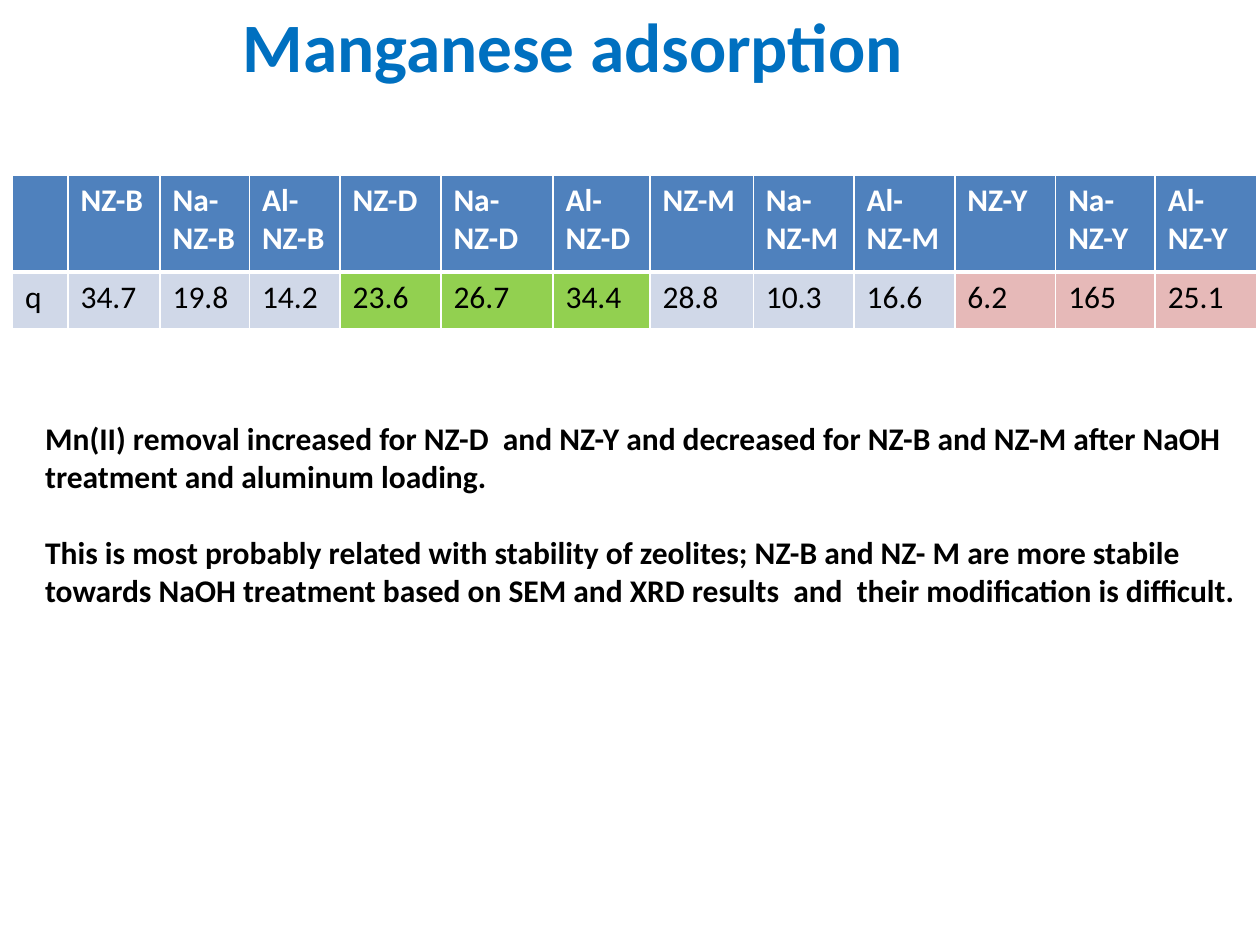
from lxml import etree
from pptx import Presentation
from pptx.dml.color import RGBColor
from pptx.enum.text import MSO_ANCHOR, PP_ALIGN
from pptx.oxml.ns import qn
from pptx.util import Inches, Pt

CENTER = PP_ALIGN.CENTER
LEFT = PP_ALIGN.LEFT
MIDDLE = MSO_ANCHOR.MIDDLE
TOP = MSO_ANCHOR.TOP

WIDTH, HEIGHT = Inches(10), Inches(7.5)
FONT = "Calibri"
COLORS = {
    "title": "0070C0",
    "header": "4F81BD",
    "plain": "D0D8E8",
    "increased": "92D050",
    "yield": "E6B9B8",
    "white": "FFFFFF",
    "black": "000000",
}
ZEOLITES = [
    ("NZ-B", "plain", ["34.7", "19.8", "14.2"]),
    ("NZ-D", "increased", ["23.6", "26.7", "34.4"]),
    ("NZ-M", "plain", ["28.8", "10.3", "16.6"]),
    ("NZ-Y", "yield", ["6.2", "165", "25.1"]),
]
TREATMENTS = ["", "Na-", "Al-"]
COLUMN_WIDTHS = [0.44, 0.73, 0.71, 0.72, 0.8, 0.89, 0.77, 0.82, 0.8, 0.8, 0.8, 0.79, 0.81]
ROW_HEIGHTS = [0.77, 0.45]
FINDINGS = [
    "Mn(II) removal increased for NZ-D  and NZ-Y and decreased for NZ-B and NZ-M "
    "after NaOH treatment and aluminum loading.",
    "This is most probably related with stability of zeolites; NZ-B and NZ- M are more stabile "
    "towards NaOH treatment based on SEM and XRD results  and  their modification is difficult.",
]


def add_run(paragraph, wording, size, color, bold):
    """Append one styled run to a paragraph."""
    run = paragraph.add_run()
    run.text = wording
    run.font.name = FONT
    run.font.size = Pt(size)
    run.font.bold = bold
    run.font.color.rgb = RGBColor.from_string(COLORS[color])


def add_text(slide, shares, paragraphs, size, color, align=LEFT, anchor=TOP, gap=0):
    """Add a bold text box placed by shares of the slide's size."""
    left, top, width, height = shares
    box = slide.shapes.add_textbox(
        int(WIDTH * left), int(HEIGHT * top), int(WIDTH * width), int(HEIGHT * height))
    frame = box.text_frame
    frame.word_wrap = True
    frame.vertical_anchor = anchor
    for index, wording in enumerate(paragraphs):
        paragraph = frame.add_paragraph() if index else frame.paragraphs[0]
        paragraph.alignment = align
        if index:
            paragraph.space_before = Pt(gap)
        add_run(paragraph, wording, size, color, True)


def set_borders(cell, top, bottom):
    """Draw white borders around a cell, with given top and bottom widths."""
    properties = cell._tc.get_or_add_tcPr()
    for side, points in (("L", 1), ("R", 1), ("T", top), ("B", bottom)):
        line = etree.SubElement(properties, qn(f"a:ln{side}"), w=str(Pt(points)))
        fill = etree.SubElement(line, qn("a:solidFill"))
        etree.SubElement(fill, qn("a:srgbClr"), val=COLORS["white"])


def fill_cell(cell, wording, fill, color, bold, borders):
    """Set the borders, fill and wording of one table cell."""
    set_borders(cell, *borders)
    cell.fill.solid()
    cell.fill.fore_color.rgb = RGBColor.from_string(COLORS[fill])
    if wording:
        add_run(cell.text_frame.paragraphs[0], wording, 18, color, bold)


def add_adsorption_table(slide):
    """Add the table of adsorption capacity for each zeolite and treatment."""
    table = slide.shapes.add_table(
        len(ROW_HEIGHTS), len(COLUMN_WIDTHS), int(WIDTH * 0.01), Inches(1.39),
        Inches(sum(COLUMN_WIDTHS)), Inches(sum(ROW_HEIGHTS))).table
    for column, width in zip(table.columns, COLUMN_WIDTHS):
        column.width = Inches(width)
    for row, height in zip(table.rows, ROW_HEIGHTS):
        row.height = Inches(height)
    samples = [("", "q", "plain")] + [
        (treatment + zeolite, capacity, fill)
        for zeolite, fill, capacities in ZEOLITES
        for treatment, capacity in zip(TREATMENTS, capacities)]
    for index, (sample, capacity, fill) in enumerate(samples):
        fill_cell(table.cell(0, index), sample, "header", "white", True, (1, 3))
        fill_cell(table.cell(1, index), capacity, fill, "black", False, (3, 1))


def main():
    """Build the slide and save it."""
    deck = Presentation()
    deck.slide_width, deck.slide_height = WIDTH, HEIGHT
    slide = deck.slides.add_slide(deck.slide_layouts[6])
    add_text(slide, (0.043, 0.017, 0.836, 0.061), ["Manganese adsorption "],
             39.6, "title", CENTER, MIDDLE)
    add_adsorption_table(slide)
    add_text(slide, (0.026, 0.437, 0.972, 0.296), FINDINGS, 18, "black", gap=22)
    deck.save("out.pptx")


if __name__ == "__main__":
    main()
